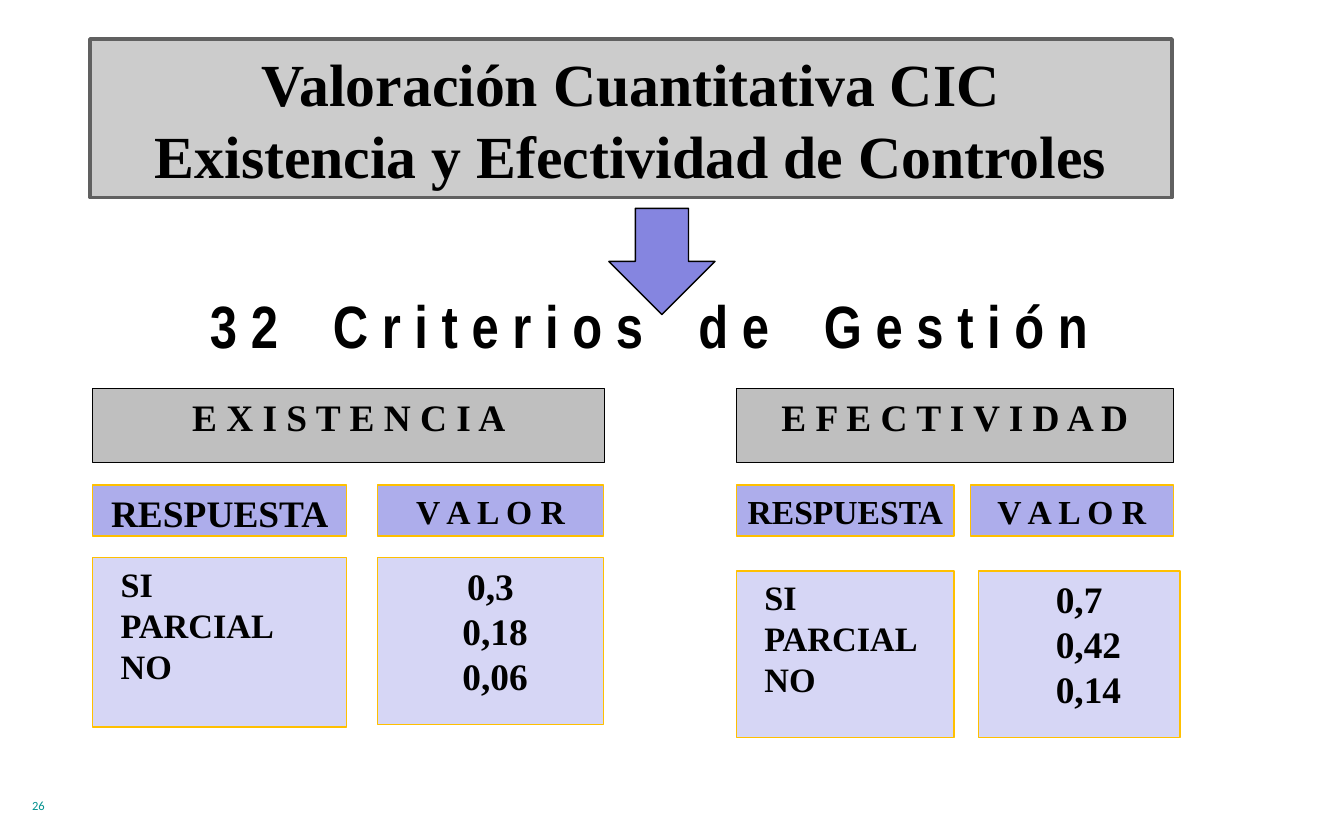
"""Build the slide on the valuation of control existence and effectiveness."""
from dataclasses import dataclass

from pptx import Presentation
from pptx.dml.color import RGBColor
from pptx.enum.shapes import MSO_SHAPE
from pptx.enum.text import MSO_ANCHOR, PP_ALIGN
from pptx.util import Inches, Pt

RECT, ARROW = MSO_SHAPE.RECTANGLE, MSO_SHAPE.DOWN_ARROW
TOP, MIDDLE = MSO_ANCHOR.TOP, MSO_ANCHOR.MIDDLE
LEFT, CENTER = PP_ALIGN.LEFT, PP_ALIGN.CENTER
WIDE, HIGH = Inches(10), Inches(6.25)
SERIF, BLACK, GOLD = "Times New Roman", "000000", "FFC000"
GRAY, LILAC, PALE = "BFBFBF", "ADADEB", "D6D6F5"


@dataclass
class Area:
    """A place in percent of the slide's width and height."""
    x: float
    y: float
    w: float
    h: float


@dataclass
class Style:
    """How the text of one box looks."""
    size: float = 20
    font: str = SERIF
    color: str = BLACK
    bold: bool = True
    align: int = CENTER
    indent: float = 0


@dataclass
class Panel:
    """One headed pair of columns: answers and their values."""
    title: str
    head: Area
    left: tuple
    right: tuple
    low: tuple
    row: float
    tall: tuple
    label: float
    values: list
    shift: float


def tint(code: str) -> RGBColor:
    """Turn a hex string into a colour."""
    return RGBColor.from_string(code)


def place(area: Area) -> tuple:
    """Turn shares of the slide into lengths."""
    return (int(WIDE * area.x / 100), int(HIGH * area.y / 100),
            int(WIDE * area.w / 100), int(HIGH * area.h / 100))


def write(frame, lines: list, style: Style) -> None:
    """Fill a frame with lines, indenting all but the first of centred ones."""
    frame.word_wrap = True
    frame.text = "\n".join(lines)
    for i, para in enumerate(frame.paragraphs):
        para.alignment = style.align
        if style.indent and (i or style.align == LEFT):
            props = para._p.get_or_add_pPr()
            props.set("marL", str(Pt(style.indent)))
            props.set("indent", "0")
        for run in para.runs:
            run.font.size = Pt(style.size)
            run.font.name = style.font
            run.font.bold = style.bold
            run.font.color.rgb = tint(style.color)


def draw(slide, kind: int, area: Area, fill: str, line: str, width: float = 0.75):
    """Draw a filled, outlined shape."""
    shape = slide.shapes.add_shape(kind, *place(area))
    shape.shadow.inherit = False
    shape.fill.solid()
    shape.fill.fore_color.rgb = tint(fill)
    shape.line.color.rgb = tint(line)
    shape.line.width = Pt(width)
    return shape


def box(slide, area: Area, lines: list, style: Style, fill: str,
        line: str = GOLD, width: float = 0.75, anchor: int = TOP) -> None:
    """Draw a rectangle with text."""
    frame = draw(slide, RECT, area, fill, line, width).text_frame
    frame.margin_left = frame.margin_right = Inches(0.08)
    frame.margin_top = frame.margin_bottom = Inches(0.04)
    frame.vertical_anchor = anchor
    write(frame, lines, style)


def note(slide, area: Area, text: str, style: Style):
    """Add a plain text box and return its paragraph."""
    frame = slide.shapes.add_textbox(*place(area)).text_frame
    write(frame, [text], style)
    return frame.paragraphs[0]


def banner(slide, area: Area, words: list, style: Style) -> None:
    """Write letter-spaced words with widened gaps between them."""
    para = note(slide, area, " ".join(words[0]), style)
    for word in words[1:]:
        for text, space in ((" ", 2200), (" ".join(word), 0)):
            run = para.add_run()
            run.text = text
            run.font.size, run.font.name = Pt(style.size), style.font
            run.font.bold = style.bold
            run.font.color.rgb = tint(style.color)
            run._r.get_or_add_rPr().set("spc", str(space))


def panel(slide, item: Panel) -> None:
    """Draw one panel of heading, labels and columns."""
    box(slide, item.head, [" ".join(item.title)], Style(), GRAY, BLACK)
    labels = (("RESPUESTA", item.left, item.label), ("V A L O R", item.right, 18))
    for text, (x, w), size in labels:
        box(slide, Area(x, 57.76, w, 6.08), [text], Style(size), LILAC)
    lists = ((["SI", "PARCIAL", "NO"], item.left, Style(18.3, align=LEFT, indent=9.15)),
             (item.values, item.low, Style(indent=item.shift)))
    for (lines, (x, w), style), h in zip(lists, item.tall):
        box(slide, Area(x, item.row, w, h), lines, style, PALE)


PANELS = [
    Panel("EXISTENCIA", Area(6.9, 46.24, 38.1, 8.8), (6.9, 18.9), (28.1, 16.8),
          (28.1, 16.8), 66.4, (20.16, 19.84), 20, ["0,3", "0,18", "0,06"], 5),
    Panel("EFECTIVIDAD", Area(54.8, 46.24, 32.5, 8.8), (54.8, 16.2), (72.2, 15.1),
          (72.8, 15), 68, (19.84, 19.84), 18, ["0,7", "0,42", "0,14"], 10),
]


def main() -> None:
    """Build and save the slide."""
    deck = Presentation()
    deck.slide_width, deck.slide_height = WIDE, HIGH
    slide = deck.slides.add_slide(deck.slide_layouts[6])
    note(slide, Area(1.4, 94.24, 20.8, 4.8), "26",
         Style(6.7, "Calibri", "00918E", False, LEFT))
    box(slide, Area(6.7, 4.64, 80.5, 18.88),
        ["Valoración Cuantitativa CIC", "Existencia y Efectividad de Controles"],
        Style(32), "CCCCCC", "606060", 2, MIDDLE)
    banner(slide, Area(10, 33.6, 76.6, 10.24), ["32", "Criterios", "de", "Gestión"],
           Style(32, "Arial Narrow"))
    for item in PANELS:
        panel(slide, item)
    draw(slide, ARROW, Area(45.3, 24.8, 7.9, 12.64), "8585E0", BLACK)
    deck.save("out.pptx")


if __name__ == "__main__":
    main()
